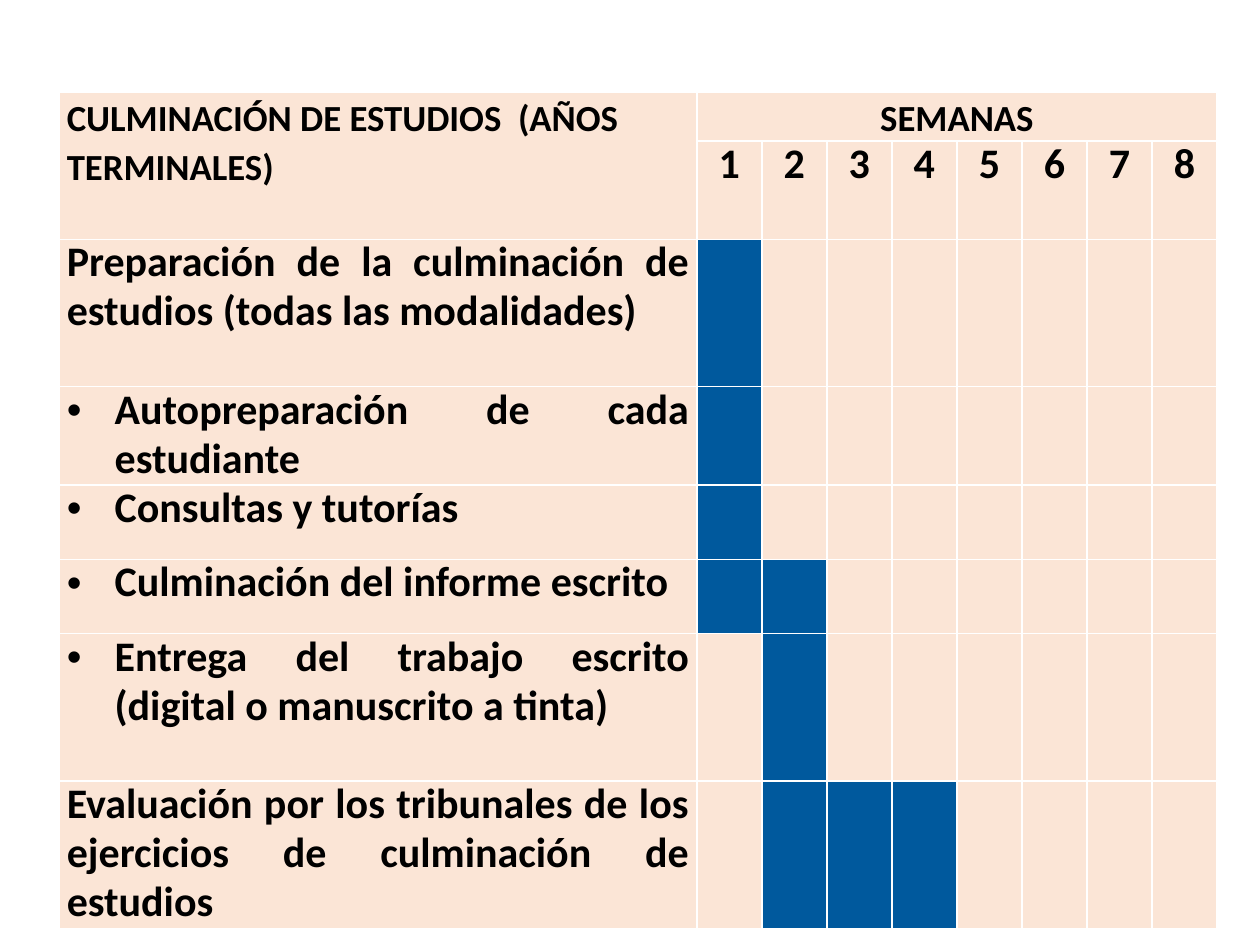
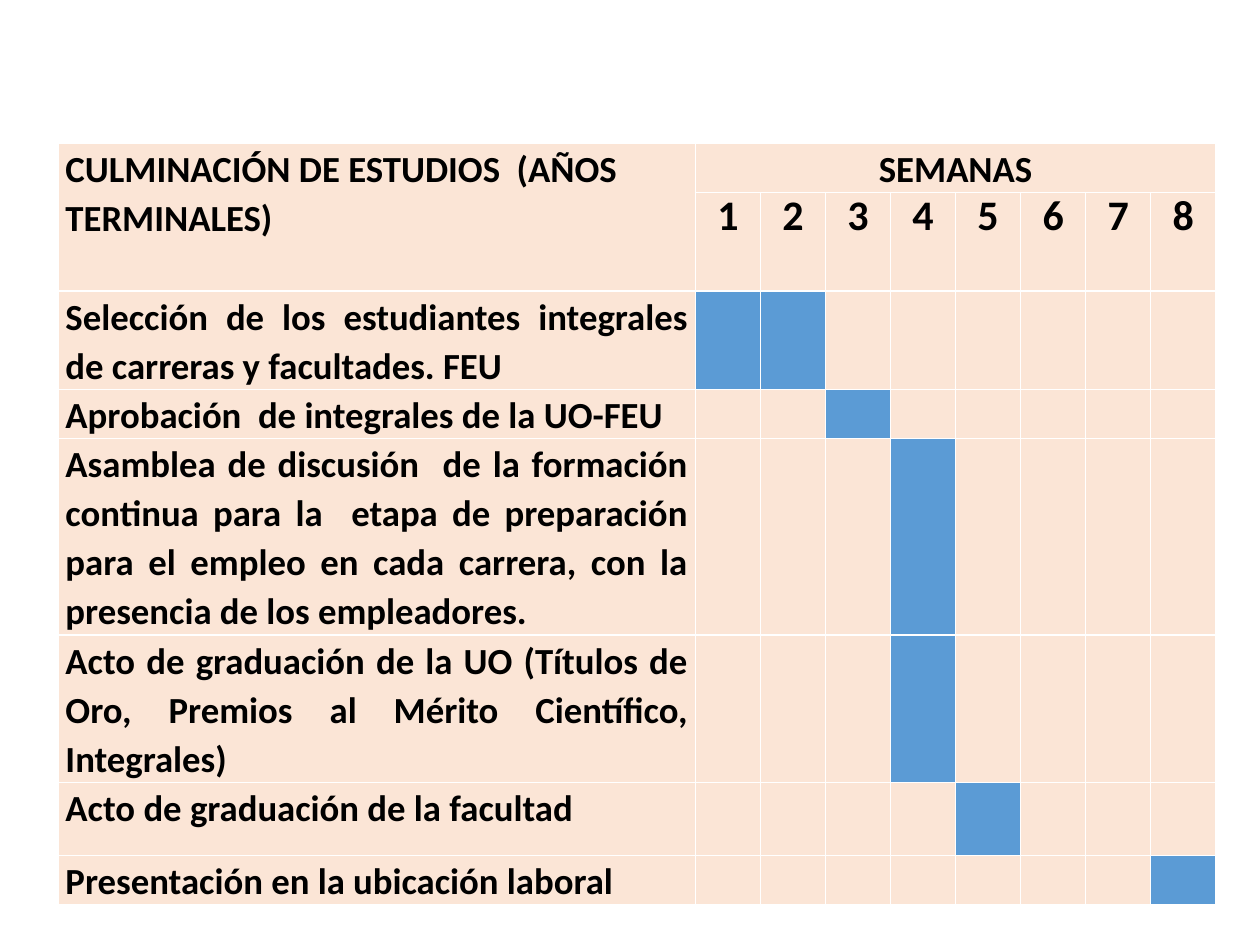
from lxml.etree import SubElement
from pptx import Presentation
from pptx.dml.color import RGBColor
from pptx.enum.text import PP_ALIGN as Align
from pptx.oxml.ns import qn
from pptx.util import Inches, Pt

PEACH, BLACK = "FBE5D6", "000000"
WEEKS = 8
TASK_W, WEEKS_W = 5.06, 4.13
HEAD = "CULMINACIÓN DE ESTUDIOS  (AÑOS TERMINALES)"
HEAD_ROWS = [0.38, 0.78]

# Each task: text, bulleted, row height, busy weeks
PLANS = [
    dict(left=0.47, top=0.73, size=24, bar="00599D", tasks=[
        ("Preparación de la culminación de estudios (todas las modalidades)", False, 1.17, [1]),
        ("Autopreparación de cada estudiante", True, 0.78, [1]),
        ("Consultas y tutorías", True, 0.59, [1]),
        ("Culminación del informe escrito", True, 0.59, [1, 2]),
        ("Entrega del trabajo escrito (digital o manuscrito a tinta)", True, 1.17, [2]),
        ("Evaluación por los tribunales de los ejercicios de culminación de estudios",
         False, 1.17, [2, 3, 4]),
    ]),
    dict(left=0.46, top=1.14, size=21, bar="5B9BD5", tasks=[
        ("Selección de los estudiantes integrales de carreras y facultades. FEU",
         False, 0.78, [1, 2]),
        ("Aprobación  de integrales de la UO-FEU", False, 0.39, [3]),
        ("Asamblea de discusión  de la formación continua para la  etapa de preparación "
         "para el empleo en cada carrera, con la presencia de los empleadores.",
         False, 1.56, [4]),
        ("Acto de graduación de la UO (Títulos de Oro, Premios al Mérito Científico, "
         "Integrales)", False, 1.17, [4]),
        ("Acto de graduación de la facultad", False, 0.58, [5]),
        ("Presentación en la ubicación laboral", False, 0.39, [8]),
    ]),
]


def rgb(code):
    return RGBColor.from_string(code)


def write(cell, text, size, align, bullet=False):
    cell.text_frame.text = text
    para = cell.text_frame.paragraphs[0]
    para.alignment = align
    para.line_spacing = Pt(28)
    if bullet:
        props = para._p.get_or_add_pPr()
        props.set("marL", str(Inches(0.38)))
        props.set("indent", str(-Inches(0.38)))
        SubElement(props, qn("a:buFont"), typeface="Arial")
        SubElement(props, qn("a:buChar"), char="•")
    font = para.runs[0].font
    font.name, font.size, font.bold = "Calibri", Pt(size), True
    font.color.rgb = rgb(BLACK)


deck = Presentation()
deck.slide_width, deck.slide_height = Inches(10), Inches(7.5)

for plan in PLANS:
    slide = deck.slides.add_slide(deck.slide_layouts[6])
    tasks = plan["tasks"]
    tall = HEAD_ROWS + [task[2] for task in tasks]
    frame = slide.shapes.add_table(
        len(tall), WEEKS + 1, Inches(plan["left"]), Inches(plan["top"]),
        Inches(TASK_W + WEEKS_W), Inches(sum(tall)))
    table = frame.table
    table.horz_banding = False
    for row, height in zip(table.rows, tall):
        row.height = Inches(height)
    for col in table.columns:
        col.width = Inches(WEEKS_W / WEEKS)
    table.columns[0].width = Inches(TASK_W)

    for cell in table.iter_cells():
        cell.fill.solid()
        cell.fill.fore_color.rgb = rgb(PEACH)
        cell.margin_left = cell.margin_right = Inches(0.06)
        cell.margin_top = cell.margin_bottom = 0

    table.cell(0, 0).merge(table.cell(1, 0))
    table.cell(0, 1).merge(table.cell(0, WEEKS))
    write(table.cell(0, 0), HEAD, 21, Align.LEFT)
    write(table.cell(0, 1), "SEMANAS", 21, Align.CENTER)
    for week in range(1, WEEKS + 1):
        write(table.cell(1, week), str(week), 24, Align.CENTER)

    for r, (text, bullet, height, busy) in enumerate(tasks, len(HEAD_ROWS)):
        write(table.cell(r, 0), text, plan["size"], Align.JUSTIFY, bullet)
        for week in busy:
            table.cell(r, week).fill.fore_color.rgb = rgb(plan["bar"])

deck.save("out.pptx")
